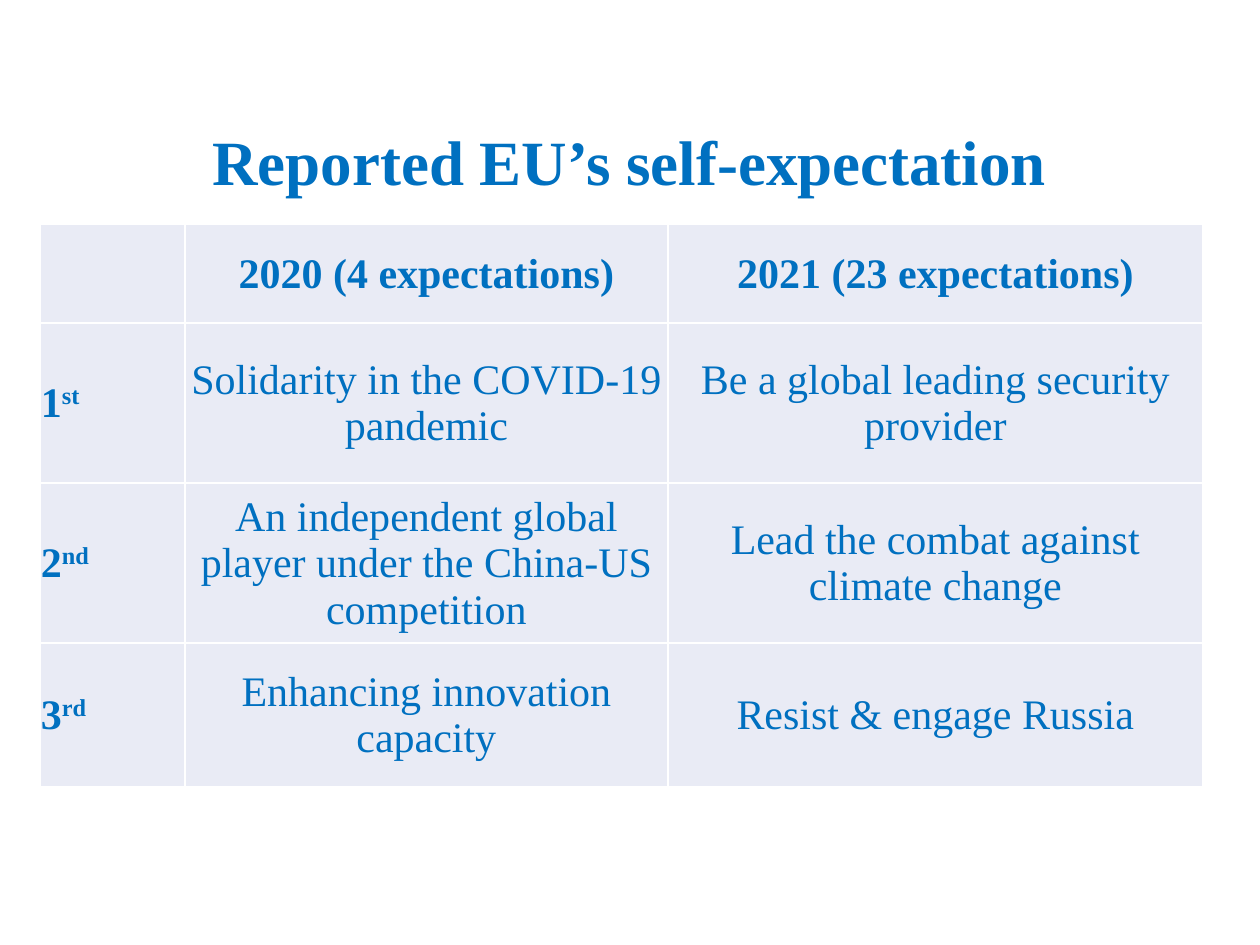
"""Build a slide with a table of the EU's reported self-expectations."""
import pptx
import pptx.dml.color
import pptx.enum.text
import pptx.oxml
import pptx.oxml.ns
import pptx.util

PX = 914400 // 126
FONT, BLUE, PALE, WHITE = "Times New Roman", "0070C0", "E9EBF5", "FFFFFF"
TITLE = "Reported EU’s self-expectation"
HEADINGS = ["2020 (4 expectations)", "2021 (23 expectations)"]
RANKS = [
    ("1", "st", "Solidarity in the COVID-19 pandemic", "Be a global leading security provider"),
    ("2", "nd", "An independent global player under the China-US competition",
     "Lead the combat against climate change"),
    ("3", "rd", "Enhancing innovation capacity", "Resist & engage Russia"),
]
TITLE_BOX = (40, 105, 1179, 120)
TABLE_LEFT, TABLE_TOP = 40, 224
COLUMN_WIDTHS = [145, 483, 535]
ROW_HEIGHTS = [99, 160, 160, 144]
CENTER = pptx.enum.text.PP_ALIGN.CENTER
LEFT = pptx.enum.text.PP_ALIGN.LEFT
MIDDLE = pptx.enum.text.MSO_ANCHOR.MIDDLE


def color(value):
    return pptx.dml.color.RGBColor.from_string(value)


def add_run(paragraph, text, size, bold, raised=False):
    run = paragraph.add_run()
    run.text = text
    run.font.name = FONT
    run.font.size = pptx.util.Pt(size)
    run.font.bold = bold
    run.font.color.rgb = color(BLUE)
    if raised:
        run.font._element.set("baseline", "30000")


def add_borders(cell):
    properties = cell._tc.get_or_add_tcPr()
    for position, side in enumerate(("lnL", "lnR", "lnT", "lnB")):
        properties.insert(position, pptx.oxml.parse_xml(
            f'<a:{side} {pptx.oxml.ns.nsdecls("a")} w="12700"><a:solidFill>'
            f'<a:srgbClr val="{WHITE}"/></a:solidFill></a:{side}>'))


def fill_cell(cell, runs, alignment, bold):
    cell.fill.solid()
    cell.fill.fore_color.rgb = color(PALE)
    add_borders(cell)
    cell.vertical_anchor = MIDDLE
    cell.margin_left = cell.margin_right = cell.margin_top = PX
    cell.margin_bottom = 0
    paragraph = cell.text_frame.paragraphs[0]
    paragraph.alignment = alignment
    for index, text in enumerate(runs):
        add_run(paragraph, text, 24, bold, raised=index > 0)


def add_title(slide):
    title = slide.shapes.title
    title.left, title.top, title.width, title.height = (PX * length for length in TITLE_BOX)
    title.text_frame.vertical_anchor = MIDDLE
    paragraph = title.text_frame.paragraphs[0]
    paragraph.alignment = CENTER
    paragraph.line_spacing = 0.9
    add_run(paragraph, TITLE, 36, True)


def add_expectations(slide):
    rows = [[[]] + [[heading] for heading in HEADINGS]]
    rows += [[[number, suffix], [first], [second]] for number, suffix, first, second in RANKS]
    table = slide.shapes.add_table(
        len(ROW_HEIGHTS), len(COLUMN_WIDTHS), PX * TABLE_LEFT, PX * TABLE_TOP,
        PX * sum(COLUMN_WIDTHS), PX * sum(ROW_HEIGHTS)).table
    table.first_row = table.horz_banding = False
    for column, width in zip(table.columns, COLUMN_WIDTHS):
        column.width = PX * width
    for row, height in zip(table.rows, ROW_HEIGHTS):
        row.height = PX * height
    for row_index, row in enumerate(rows):
        for column_index, runs in enumerate(row):
            fill_cell(table.cell(row_index, column_index), runs,
                      CENTER if column_index else LEFT,
                      row_index == 0 or column_index == 0)


def main():
    presentation = pptx.Presentation()
    presentation.slide_width = pptx.util.Inches(10)
    presentation.slide_height = pptx.util.Inches(7.5)
    slide = presentation.slides.add_slide(presentation.slide_layouts[5])
    add_title(slide)
    add_expectations(slide)
    presentation.save("out.pptx")


if __name__ == "__main__":
    main()
